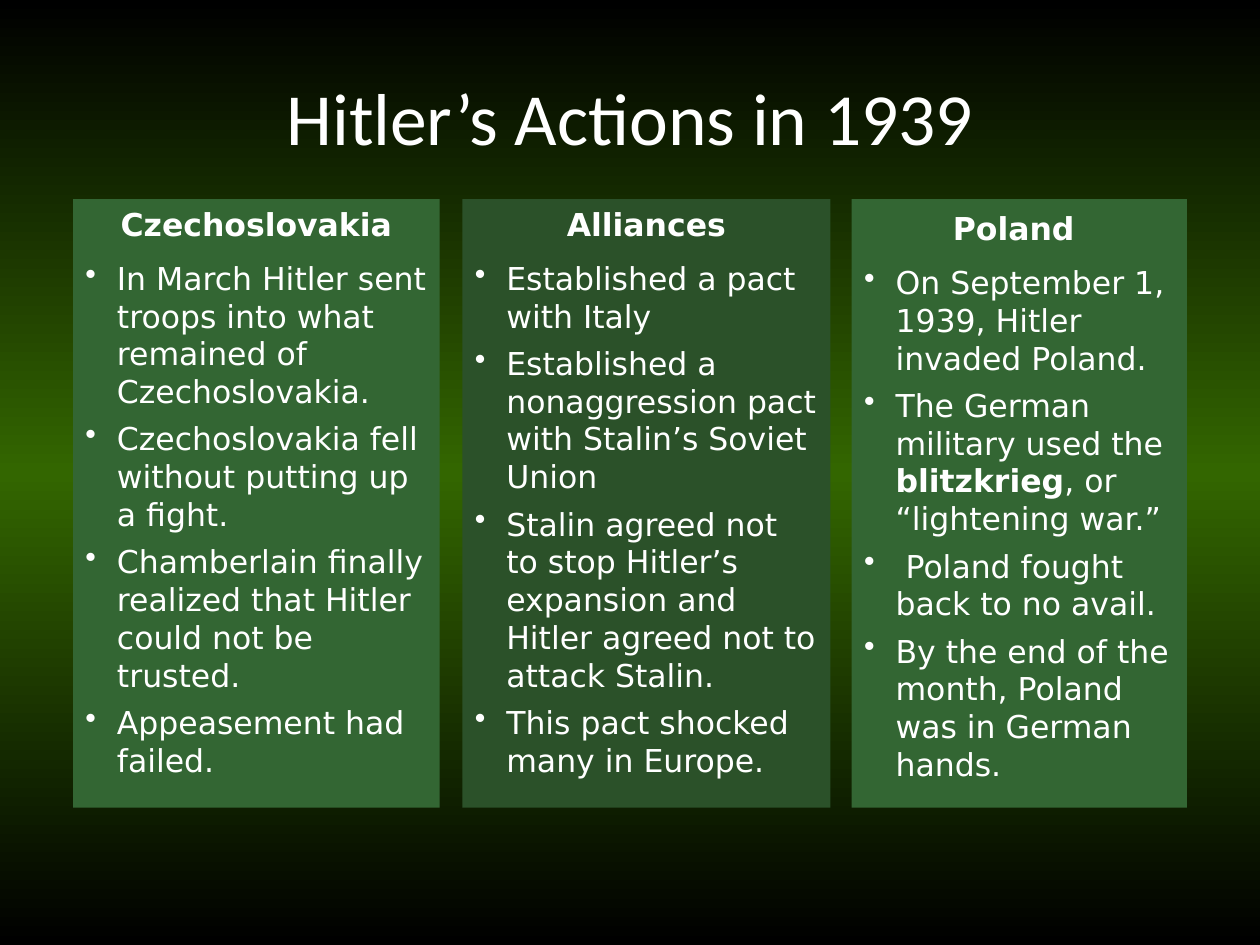
import pptx
import pptx.util
import pptx.oxml
import pptx.oxml.ns
import pptx.dml.color
import pptx.enum.shapes
import pptx.enum.text
from pptx.util import Inches

COLORS = {
    "black": "000000",
    "glow": "336600",
    "green": "336633",
    "dark": "2B5129",
    "white": "FFFFFF",
}
FONT = "DejaVu Sans"
ALIGN = pptx.enum.text.PP_ALIGN

# Each column: width, fill, heading runs, points; a point is a list of (text, bold)
COLUMNS = [
    (2.91, "green", [("Czechoslovakia", True, 18)], [
        [("In March Hitler sent troops into what remained of Czechoslovakia.", False)],
        [("Czechoslovakia fell without putting up a fight.", False)],
        [("Chamberlain finally realized that Hitler could not be trusted.", False)],
        [("Appeasement had failed.", False)],
    ]),
    (2.92, "dark", [("Alliances", True, 18)], [
        [("Established a pact with Italy", False)],
        [("Established a nonaggression pact with Stalin’s Soviet Union", False)],
        [("Stalin agreed not to stop Hitler’s expansion and "
          "Hitler agreed not to attack Stalin.", False)],
        [("This pact shocked many in Europe.", False)],
    ]),
    (2.66, "green", [("Poland", True, 18), (" ", False, 20)], [
        [("On September 1, 1939, Hitler invaded Poland.", False)],
        [("The German military used the ", False), ("blitzkrieg", True),
         (", or “lightening war.”", False)],
        [(" Poland fought back to no avail.", False)],
        [("By the end of the month, Poland was in German hands.", False)],
    ]),
]


def color(name):
    return pptx.dml.color.RGBColor.from_string(COLORS[name])


def add_text(para, text, size=18, bold=False, font=FONT, tint="white"):
    run = para.add_run()
    run.text = text
    run.font.size = pptx.util.Pt(size)
    run.font.bold = bold
    run.font.name = font
    run.font.color.rgb = color(tint)


def add_bullet(para):
    props = para._p.get_or_add_pPr()
    props.set("marL", str(Inches(0.25)))
    props.set("indent", str(Inches(-0.25)))
    mark = pptx.oxml.parse_xml(
        f'<a:buChar {pptx.oxml.ns.nsdecls("a")} char="•"/>')
    props.append(mark)


def paint_back(slide):
    fill = slide.background.fill
    fill.gradient()
    fill.gradient_angle = 270
    stops = next(slide.element.iter(pptx.oxml.ns.qn("a:gsLst")))
    for stop in list(stops):
        stops.remove(stop)
    for place, name in ((0, "black"), (50, "glow"), (100, "black")):
        stops.append(pptx.oxml.parse_xml(
            f'<a:gs {pptx.oxml.ns.nsdecls("a")} pos="{place * 1000}">'
            f'<a:srgbClr val="{COLORS[name]}"/></a:gs>'))


def add_title(slide, left, top, width, height):
    title = slide.shapes.title
    title.left, title.top = Inches(left), Inches(top)
    title.width, title.height = Inches(width), Inches(height)
    frame = title.text_frame
    frame.vertical_anchor = pptx.enum.text.MSO_ANCHOR.MIDDLE
    para = frame.paragraphs[0]
    para.alignment = ALIGN.CENTER
    add_text(para, "Hitler’s Actions in 1939", size=42, font="Calibri")


def add_column(slide, left, top, width, height, tint, heading, points):
    panel = slide.shapes.add_shape(
        pptx.enum.shapes.MSO_SHAPE.RECTANGLE,
        Inches(left), Inches(top), Inches(width), Inches(height))
    panel.shadow.inherit = False
    panel.fill.solid()
    panel.fill.fore_color.rgb = color(tint)
    panel.line.fill.background()
    frame = panel.text_frame
    frame.word_wrap = True
    frame.vertical_anchor = pptx.enum.text.MSO_ANCHOR.TOP

    # Heading
    para = frame.paragraphs[0]
    para.alignment = ALIGN.CENTER
    for text, bold, size in heading:
        add_text(para, text, size=size, bold=bold)

    # Bulleted points, with a wider gap below the heading
    for index, point in enumerate(points):
        para = frame.add_paragraph()
        para.alignment = ALIGN.LEFT
        para.space_before = pptx.util.Pt(5.4 if index else 9)
        add_bullet(para)
        for text, bold in point:
            add_text(para, text, bold=bold)


def main():
    deck = pptx.Presentation()
    deck.slide_width, deck.slide_height = Inches(10), Inches(7.5)
    slide = deck.slides.add_slide(deck.slide_layouts[5])
    paint_back(slide)
    add_title(slide, 0.75, 0.3, 8.5, 1.25)
    for index, (width, tint, heading, points) in enumerate(COLUMNS):
        add_column(slide, 0.58 + index * 3.09, 1.58, width, 4.83,
                   tint, heading, points)
    deck.save("out.pptx")


if __name__ == "__main__":
    main()
